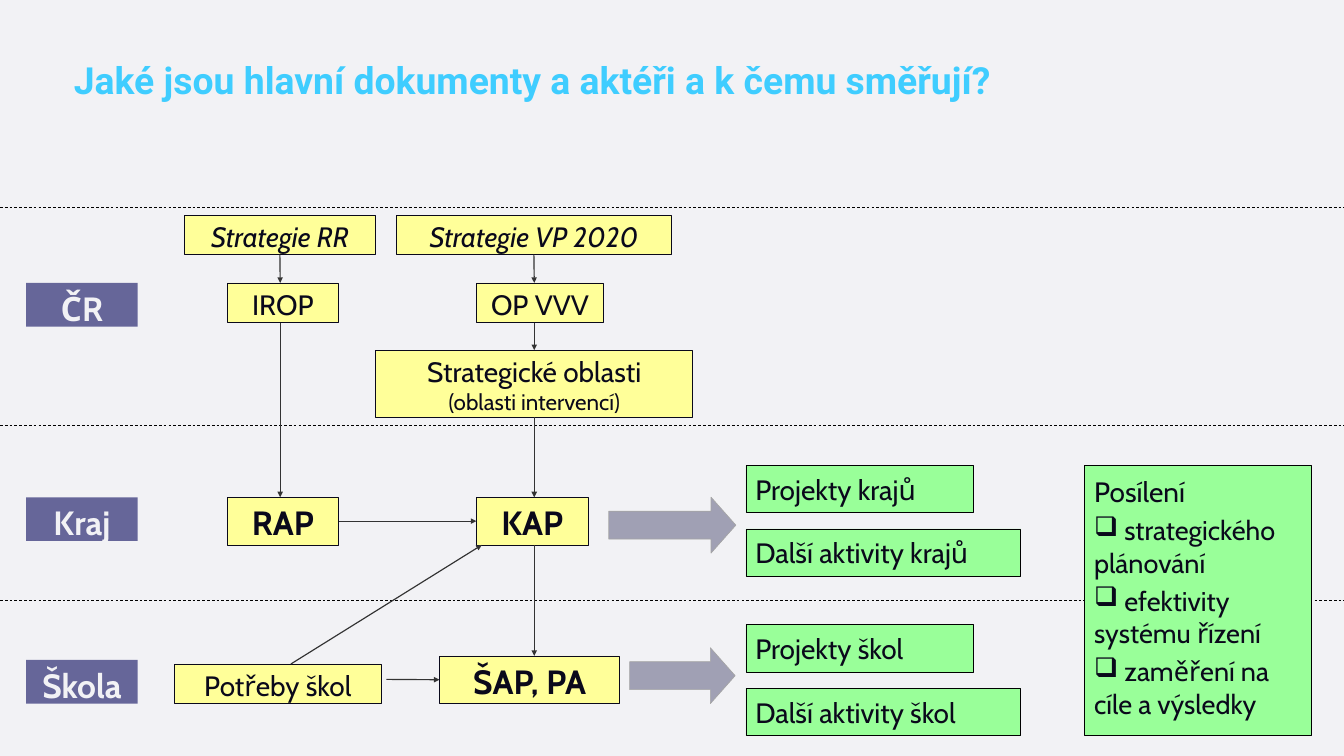
from dataclasses import dataclass
from typing import Optional

from lxml.etree import SubElement
from pptx import Presentation
from pptx.dml.color import RGBColor
from pptx.enum.dml import MSO_LINE_DASH_STYLE as Dash
from pptx.enum.shapes import MSO_CONNECTOR as Connector, MSO_SHAPE as Preset
from pptx.enum.text import MSO_ANCHOR as Anchor, PP_ALIGN as Align
from pptx.oxml.ns import qn
from pptx.util import Inches, Pt

INK, PAPER, BLACK, ARROW = "0A091B", "F2F2F5", "000000", "333333"
YELLOW, GREEN, VIOLET, GREY_VIOLET = "FFFF99", "99FF99", "666699", "6A6A8A"
TOP, LEFT, BOTTOM, RIGHT = range(4)
DOCUMENT_X, OUTPUT_X = 4.17, 11.1
STRATEGY_X = 7.95


@dataclass
class Box:
    text: str
    left: float
    top: float
    width: float
    height: float = 0.59
    size: float = 30
    bold: bool = False
    italic: bool = False


@dataclass
class Joint:
    box: object
    side: int


def colour(target, value: str) -> None:
    """Give a fill or a font its colour."""
    if hasattr(target, "solid"):
        target.solid()
        target.fore_color.rgb = RGBColor.from_string(value)
    else:
        target.color.rgb = RGBColor.from_string(value)


def write(frame, text: str, *, size: float = 30, font: str = "Cabin", ink: str = INK,
          bold: bool = False, italic: bool = False, align=Align.LEFT, before: float = 0,
          after: float = 0, spacing: float = 1.0, bullet: str = "") -> None:
    """Fill the empty first paragraph, or add one after it."""
    frame.word_wrap = True
    paragraph = frame.paragraphs[0] if not frame.text else frame.add_paragraph()
    paragraph.alignment, paragraph.line_spacing = align, spacing
    paragraph.space_before, paragraph.space_after = Pt(before), Pt(after)
    if bullet:
        properties = paragraph._p.get_or_add_pPr()
        properties.set("marL", "0")
        properties.set("indent", "0")
        SubElement(properties, qn("a:buChar")).set("char", bullet)
    run = paragraph.add_run()
    run.text = text
    run.font.name, run.font.size = font, Pt(size)
    run.font.bold, run.font.italic = bold, italic
    colour(run.font, ink)


def add_preset(slide, preset, left: float, top: float, width: float, height: float,
               fill: str, line: Optional[str]):
    shape = slide.shapes.add_shape(preset, *map(Inches, (left, top, width, height)))
    shape.shadow.inherit = False
    colour(shape.fill, fill)
    if line:
        colour(shape.line.fill, line)
        shape.line.width = Pt(0.75)
    else:
        shape.line.fill.background()
    return shape


def set_insets(frame, left: float, top: float, right: float, bottom: float, anchor) -> None:
    frame.margin_left, frame.margin_top = Inches(left), Inches(top)
    frame.margin_right, frame.margin_bottom = Inches(right), Inches(bottom)
    frame.vertical_anchor = anchor


def add_box(slide, box: Box, fill: str = YELLOW, line: Optional[str] = INK, ink: str = INK):
    shape = add_preset(slide, Preset.RECTANGLE, box.left, box.top, box.width, box.height,
                       fill, line)
    set_insets(shape.text_frame, 0, 0.07, 0, 0.02, Anchor.TOP)
    write(shape.text_frame, box.text, size=box.size, bold=box.bold, italic=box.italic,
          ink=ink, align=Align.CENTER)
    return shape


def add_green(slide, left: float, top: float, width: float, height: float,
              inset_top: float, anchor):
    shape = add_preset(slide, Preset.RECTANGLE, left, top, width, height, GREEN, BLACK)
    set_insets(shape.text_frame, 0.14, inset_top, 0, 0, anchor)
    return shape.text_frame


def add_line(slide, x1: float, y1: float, x2: float, y2: float, ink: str, width: float):
    line = slide.shapes.add_connector(Connector.STRAIGHT, *map(Inches, (x1, y1, x2, y2)))
    colour(line.line.fill, ink)
    line.line.width = Pt(width)
    SubElement(line._element.spPr, qn("a:effectLst"))
    return line


def add_arrow(slide, x1: float, y1: float, x2: float, y2: float,
              begin: Optional[Joint] = None, end: Optional[Joint] = None) -> None:
    arrow = add_line(slide, x1, y1, x2, y2, ARROW, 1.25)
    SubElement(arrow.line._get_or_add_ln(), qn("a:tailEnd")).set("type", "triangle")
    if begin:
        arrow.begin_connect(begin.box, begin.side)
    if end:
        arrow.end_connect(end.box, end.side)


def add_block_arrow(slide, left: float, top: float, width: float) -> None:
    arrow = add_preset(slide, Preset.RIGHT_ARROW, left, top, width, 0.83,
                       GREY_VIOLET, "A5A5A5")
    arrow.adjustments[0], arrow.adjustments[1] = 0.5, 0.444
    tint = arrow._element.spPr.find(qn("a:solidFill")).find(qn("a:srgbClr"))
    SubElement(tint, qn("a:alpha")).set("val", "60000")


def main() -> None:
    deck = Presentation()
    deck.slide_width, deck.slide_height = Inches(20), Inches(11.25)
    slide = deck.slides.add_slide(deck.slide_layouts[6])
    colour(slide.background.fill, PAPER)

    # Title
    title = slide.shapes.add_textbox(*map(Inches, (1, 0.88, 18.05, 0.71)))
    write(title.text_frame, "Jaké jsou hlavní dokumenty a aktéři a k čemu směřují?",
          size=40, font="Roboto", ink="3FCDFF", bold=True, spacing=0.9)

    # Levels and the lines above them
    for border in (3.09, 6.33, 8.93):
        add_line(slide, 0, border, 20, border, BLACK, 0.75).line.dash_style = Dash.DASH
    for level, top in (("ČR", 4.21), ("Kraj", 7.4), ("Škola", 9.82)):
        add_box(slide, Box(level, 0.39, top, 1.66, 0.65, size=36, bold=True),
                VIOLET, None, PAPER)

    # Documents
    strategy_rr = add_box(slide, Box("Strategie RR", 2.75, 3.2, 2.83, italic=True))
    strategy_vp = add_box(slide, Box("Strategie VP 2020", 5.9, 3.2, 4.09, italic=True))
    add_box(slide, Box("IROP", 3.38, 4.21, 1.66))
    add_box(slide, Box("OP VVV", 7.09, 4.21, 1.89))
    areas = add_box(slide, Box("Strategické oblasti", 5.59, 5.21, 4.72, 1))
    write(areas.text_frame, "(oblasti intervencí)", size=24, align=Align.CENTER)
    rap = add_box(slide, Box("RAP", 3.38, 7.4, 1.66, 0.71, size=36, bold=True))
    kap = add_box(slide, Box("KAP", 7.09, 7.4, 1.66, 0.71, size=36, bold=True))
    add_box(slide, Box("Potřeby škol", 2.6, 9.88, 3.07))
    school_plan = add_box(slide, Box("ŠAP, PA", 6.54, 9.76, 2.68, 0.71, size=36, bold=True))

    # Links between documents
    add_arrow(slide, DOCUMENT_X, 3.79, DOCUMENT_X, 4.21, begin=Joint(strategy_rr, BOTTOM))
    add_arrow(slide, DOCUMENT_X, 4.8, DOCUMENT_X, 7.4)
    add_arrow(slide, STRATEGY_X, 3.79, STRATEGY_X, 4.21, begin=Joint(strategy_vp, BOTTOM))
    add_arrow(slide, STRATEGY_X, 4.8, STRATEGY_X, 5.21, end=Joint(areas, TOP))
    add_arrow(slide, STRATEGY_X, 6.21, STRATEGY_X, 7.4, begin=Joint(areas, BOTTOM))
    add_arrow(slide, STRATEGY_X, 8.11, STRATEGY_X, 9.76)
    add_arrow(slide, 5.04, 7.75, 7.09, 7.75, Joint(rap, RIGHT), Joint(kap, LEFT))
    add_arrow(slide, 5.75, 10.11, 6.54, 10.11, end=Joint(school_plan, LEFT))
    add_arrow(slide, 4.33, 9.88, 7.17, 8.11)

    # Projects and activities
    add_block_arrow(slide, 9.06, 7.4, 1.89)
    add_block_arrow(slide, 9.37, 9.64, 1.57)
    for owner, top in (("krajů", 6.92), ("škol", 9.29)):
        for output, offset, width in (("Projekty", 0, 3.38), ("Další aktivity", 0.95, 4.09)):
            frame = add_green(slide, OUTPUT_X, top + offset, width, 0.71, 0, Anchor.MIDDLE)
            write(frame, f"{output} {owner}", after=17.9)

    # Goals
    goals = add_green(slide, 16.14, 6.92, 3.38, 4.02, 0.14, Anchor.TOP)
    write(goals, "Posílení", before=10.7)
    for goal in ("strategického plánování", "efektivity systému řízení",
                 "zaměření na cíle a výsledky"):
        write(goals, f" {goal}", size=29, before=6, bullet="❑")

    deck.save("out.pptx")


if __name__ == "__main__":
    main()
